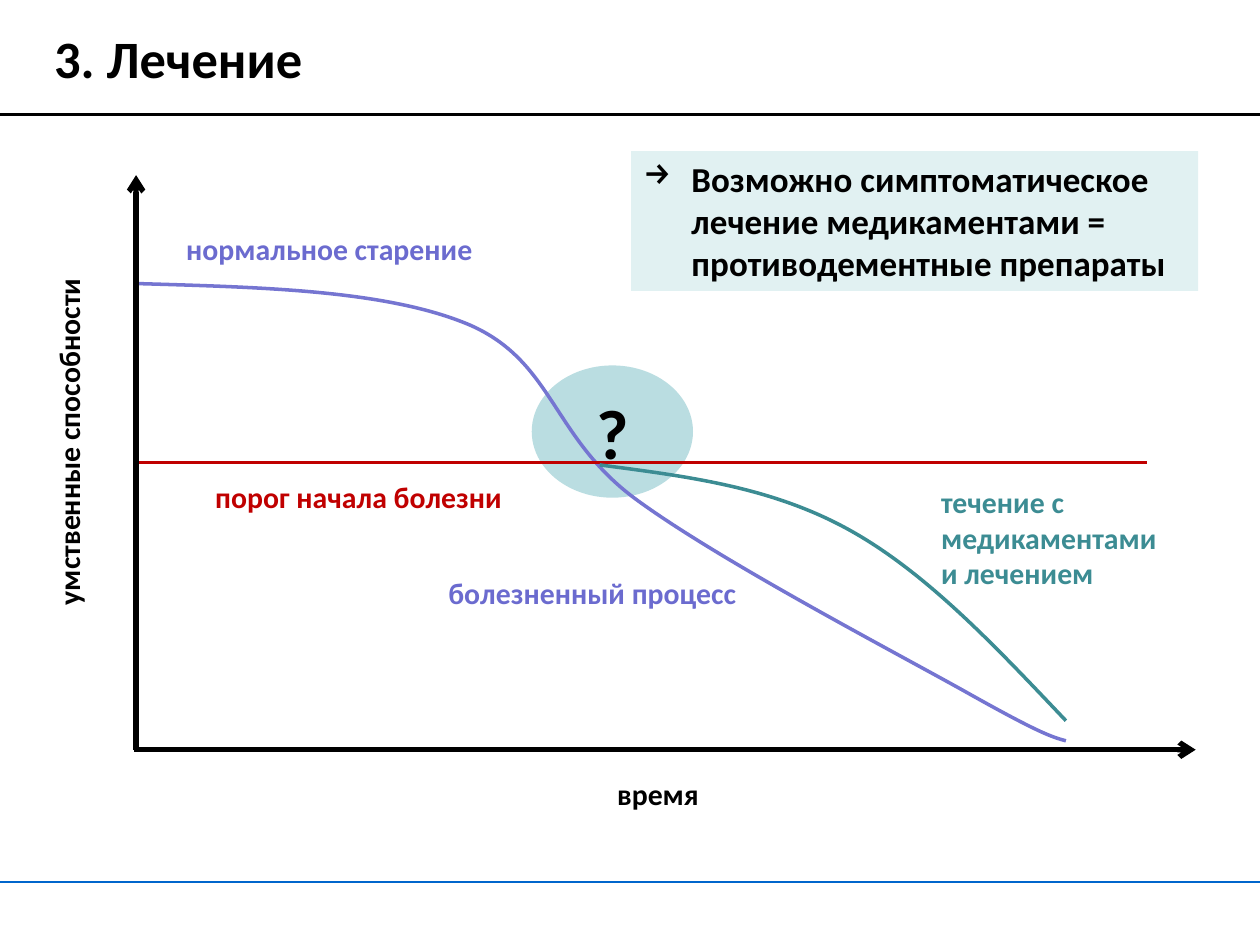
"""Build a slide on treatment: mental ability over time with and without medication."""
from dataclasses import dataclass
from typing import Optional

import pptx
import pptx.dml.color
import pptx.enum.shapes
import pptx.enum.text
import pptx.oxml
import pptx.oxml.ns
import pptx.util

COLUMNS, ROWS = 100, 75
CELL = pptx.util.Inches(0.1)
FONT = "Calibri"
BLACK, RED, TEAL = "000000", "C00000", "3C8C93"
VIOLET, LABEL_VIOLET = "7575D1", "6B6BCF"
AXIS_X, AXIS_Y, THRESHOLD_Y = 10.6, 59.5, 36.7
LABEL_HEIGHT = 3.9


@dataclass
class Rule:
    """A straight line between two grid points."""
    start: tuple[float, float]
    end: tuple[float, float]
    color: str
    width: float
    arrow: bool = False


@dataclass
class Curve:
    """A chain of cubic curves: one start point, then three points per piece."""
    points: list[tuple[float, float]]
    color: str


@dataclass
class Label:
    """A bold caption in a grid box."""
    text: str
    box: tuple[float, float, float, float]
    color: str = BLACK
    rotation: float = 0


@dataclass
class Panel:
    """A filled preset shape in a grid box."""
    preset: pptx.enum.shapes.MSO_SHAPE
    box: tuple[float, float, float, float]
    fill: str
    opacity: Optional[int] = None


BOTTOM_RULE = Rule((0, 70), (COLUMNS, 70), "0066CC", 1.5)
TIME_AXIS = Rule((AXIS_X, AXIS_Y), (94.9, AXIS_Y), BLACK, 3, True)
ABILITY_AXIS = Rule((10.8, AXIS_Y), (10.8, 13.9), BLACK, 3, True)
THRESHOLD = Rule((AXIS_X, THRESHOLD_Y), (91, THRESHOLD_Y), RED, 1.5)
TITLE_RULE = Rule((0, 9.1), (COLUMNS, 9.1), BLACK, 1.5)
DISEASE = Curve([
    (AXIS_X, 22.5),
    (20.6, 22.8), (30.7, 23), (37.3, 25.8),
    (43.9, 28.7), (43.8, 34.6), (50.3, 39.5),
    (56.9, 44.4), (71.1, 51.8), (76.8, 55),
    (82.5, 58.2), (83.5, 58.5), (84.6, 58.8),
], VIOLET)
TREATED = Curve([
    (47.6, 36.9),
    (54.4, 37.8), (61.1, 38.6), (67.3, 42),
    (73.5, 45.4), (79, 51.3), (84.6, 57.2),
], TEAL)
ONSET = Panel(pptx.enum.shapes.MSO_SHAPE.OVAL, (42.2, 29, 12.8, 10.5), "BADDE1")
CONCLUSION = Panel(pptx.enum.shapes.MSO_SHAPE.RECTANGLE, (50.1, 12, 45, 11.1), "BBE0E3", 44)
LABELS = [
    Label("время", (48, 61.1, 9.4, LABEL_HEIGHT)),
    Label("умственные способности", (-9.2, 32.4, 29.3, LABEL_HEIGHT), rotation=270),
    Label("порог начала болезни", (16.1, 37.5, 38.8, LABEL_HEIGHT), RED),
    Label("нормальное старение", (13.8, 17.8, 26, LABEL_HEIGHT), LABEL_VIOLET),
    Label("течение с медикаментами и лечением", (73.7, 37.9, 19.5, 9.6), TEAL),
    Label("болезненный процесс", (34.6, 45.1, 26, LABEL_HEIGHT), LABEL_VIOLET),
]


def rgb(color: str) -> pptx.dml.color.RGBColor:
    """Turn a hex string into a colour."""
    return pptx.dml.color.RGBColor.from_string(color)


def grid(*cells: float) -> list[int]:
    """Turn grid steps into lengths."""
    return [round(cell * CELL) for cell in cells]


def add_child(parent, tag: str, **attributes: str):
    """Append a drawing element with attributes."""
    child = pptx.oxml.parse_xml(f"<{tag} {pptx.oxml.ns.nsdecls('a')}/>")
    for key, value in attributes.items():
        child.set(key, value)
    parent.append(child)
    return child


def write(shape, text: str, *, size: float, color: str = BLACK, centered: bool = False,
          bullet: str = "", inset: Optional[float] = None, grow: bool = False) -> None:
    """Put one bold paragraph into a shape."""
    frame = shape.text_frame
    frame.word_wrap = True
    anchors, aligns = pptx.enum.text.MSO_ANCHOR, pptx.enum.text.PP_ALIGN
    frame.vertical_anchor = anchors.MIDDLE if centered else anchors.TOP
    if grow:
        frame.auto_size = pptx.enum.text.MSO_AUTO_SIZE.SHAPE_TO_FIT_TEXT
    if inset is not None:
        frame.margin_left = frame.margin_right = frame.margin_top = frame.margin_bottom = inset
    paragraph = frame.paragraphs[0]
    paragraph.alignment = aligns.CENTER if centered else aligns.LEFT
    if bullet:
        properties = paragraph._p.get_or_add_pPr()
        indent = pptx.util.Inches(0.38)
        properties.set("marL", str(indent))
        properties.set("indent", str(-indent))
        add_child(properties, "a:buChar", char=bullet)
    run = paragraph.add_run()
    run.text = text
    run.font.name, run.font.size, run.font.bold = FONT, pptx.util.Pt(size), True
    run.font.color.rgb = rgb(color)


def draw_rule(shapes, rule: Rule) -> None:
    """Draw a straight line, with an arrowhead if asked."""
    line = shapes.add_connector(pptx.enum.shapes.MSO_CONNECTOR.STRAIGHT,
                                *grid(*rule.start, *rule.end))
    line.line.color.rgb = rgb(rule.color)
    line.line.width = pptx.util.Pt(rule.width)
    if rule.arrow:
        add_child(line.line._get_or_add_ln(), "a:tailEnd", type="arrow")
    add_child(line._element.spPr, "a:effectLst")


def draw_curve(shapes, curve: Curve) -> None:
    """Draw an open outline whose points are joined in threes into cubic pieces."""
    start, *others = [grid(*point) for point in curve.points]
    builder = shapes.build_freeform(*start)
    builder.add_line_segments(others, close=False)
    outline = builder.convert_to_shape()
    outline.fill.background()
    outline.line.color.rgb = rgb(curve.color)
    outline.line.width = pptx.util.Pt(2)
    outline.shadow.inherit = False
    segments = outline._element.xpath(".//a:lnTo")
    track = segments[0].getparent()
    for first in range(0, len(segments), 3):
        piece = add_child(track, "a:cubicBezTo")
        for segment in segments[first:first + 3]:
            piece.append(segment[0])
            track.remove(segment)


def draw_panel(shapes, panel: Panel):
    """Draw a filled shape without outline."""
    shape = shapes.add_shape(panel.preset, *grid(*panel.box))
    shape.shadow.inherit = False
    shape.fill.solid()
    shape.fill.fore_color.rgb = rgb(panel.fill)
    if panel.opacity is not None:
        tint = shape._element.spPr.xpath("./a:solidFill/a:srgbClr")[0]
        add_child(tint, "a:alpha", val=str(panel.opacity * 1000))
    shape.line.fill.background()
    return shape


def draw_label(shapes, label: Label) -> None:
    """Draw a caption."""
    caption = shapes.add_textbox(*grid(*label.box))
    caption.rotation = label.rotation
    write(caption, label.text, size=17, color=label.color, grow=True)


def main() -> None:
    """Build and save the slide."""
    deck = pptx.Presentation()
    deck.slide_width, deck.slide_height = grid(COLUMNS, ROWS)
    shapes = deck.slides.add_slide(deck.slide_layouts[6]).shapes
    draw_rule(shapes, BOTTOM_RULE)
    write(draw_panel(shapes, ONSET), "?", size=40, centered=True)
    draw_rule(shapes, TIME_AXIS)
    draw_curve(shapes, DISEASE)
    draw_rule(shapes, THRESHOLD)
    draw_curve(shapes, TREATED)
    for label in LABELS:
        draw_label(shapes, label)
    draw_rule(shapes, ABILITY_AXIS)
    draw_rule(shapes, TITLE_RULE)
    write(shapes.add_textbox(*grid(4.3, 2.1, 94.5, 6.1)), "3. Лечение", size=30, inset=0)
    write(draw_panel(shapes, CONCLUSION),
          "Возможно симптоматическое лечение медикаментами = противодементные препараты",
          size=20, bullet="→", grow=True)
    deck.save("out.pptx")


if __name__ == "__main__":
    main()
